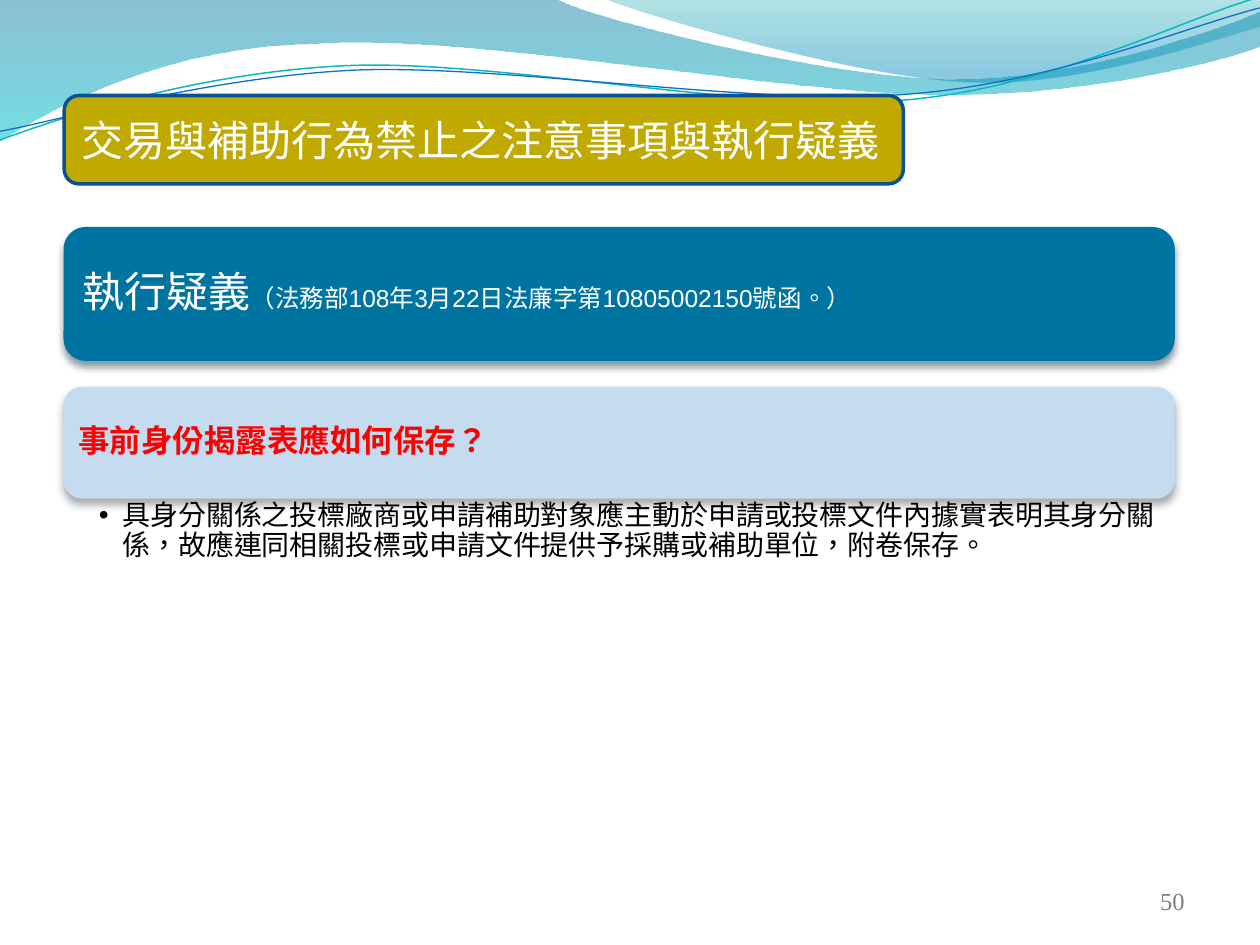
from lxml import etree
from pptx import Presentation
from pptx.dml.color import RGBColor
from pptx.enum.lang import MSO_LANGUAGE_ID
from pptx.enum.shapes import MSO_SHAPE
from pptx.enum.text import MSO_ANCHOR, MSO_AUTO_SIZE, PP_ALIGN
from pptx.oxml.ns import qn
from pptx.util import Pt

ROUND_RECT = MSO_SHAPE.ROUNDED_RECTANGLE
MIDDLE, TOP = MSO_ANCHOR.MIDDLE, MSO_ANCHOR.TOP
LEFT, RIGHT = PP_ALIGN.LEFT, PP_ALIGN.RIGHT
NO_AUTOFIT = MSO_AUTO_SIZE.NONE
TAIWAN = MSO_LANGUAGE_ID.TRADITIONAL_CHINESE

COLORS = {
    "gold": "C0A900", "navy": "0B5292", "blue": "0074A1", "pale": "C5DBEF",
    "white": "FFFFFF", "black": "000000", "red": "FF0000", "gray": "7F7F7F",
    "cyan": "00C6CF", "teal": "00A1A9", "sky": "008BBF",
    "teal_line": "0AB8BF", "blue_line": "0F6FC6",
    "blue_shadow": "002938", "pale_shadow": "454D54",
}
SANS, SERIF, TITLING, CJK = "Arial", "Times New Roman", "TeX Gyre Pagella", "Noto Sans CJK SC"
PANEL_LEFT, PANEL_WIDTH = 36.3, 635
TITLE_BOX = (36.7, 54.6, 479.5, 50.5)

BIG_WAVE = [(0, 0), (317, -1), (343, 12, 478, 45, 546, 45), (614, 45, 690, 19, 720, 6.5),
            (721, 26), (708, 32, 626, 55, 537, 54), (448, 54, 275, 20, 185, 24.5),
            (93, 26, 33, 60, -1, 81)]
SMALL_WAVE = [(345, -1), (366, 8, 491, 45, 554, 47), (616, 50, 692, 23, 720, 15), (720, 0)]
TEAL_CURVE = [(0, 80), (35, 67, 114, 41, 199, 37.5), (284, 34, 427, 64, 513, 57.5),
              (600, 51, 675, 11, 719, -1.5)]
BLUE_CURVE = [(0, 75), (34, 69, 118, 44, 204, 40), (290, 37, 430, 60.5, 516, 54),
              (602, 48, 678, 15, 720, 4.5)]


def rgb(name):
    return RGBColor.from_string(COLORS[name])


def add_outline(s, segments, closed):
    points = [(seg[i] * 100, seg[i + 1] * 100)
              for seg in segments for i in range(0, len(seg), 2)]
    builder = s.shapes.build_freeform(*points[0], scale=Pt(1) / 100)
    builder.add_line_segments(points[1:], close=closed)
    sp = builder.convert_to_shape()
    sp.shadow.inherit = False
    lines = iter(list(sp._element.iter(qn("a:lnTo"))))
    for seg in segments[1:]:
        first = next(lines)
        if len(seg) == 6:
            first.tag = qn("a:cubicBezTo")
            for _ in range(2):
                line = next(lines)
                first.append(line[0])
                line.getparent().remove(line)
    return sp


def add_wave(s, segments, stops):
    sp = add_outline(s, segments, True)
    sp.line.fill.background()
    sp.fill.gradient()
    sp.fill.gradient_angle = 270
    elements = sp._element.spPr.iter(qn("a:gs"))
    for stop, gs, (position, color, opacity) in zip(sp.fill.gradient_stops, elements, stops):
        stop.position = position
        stop.color.rgb = rgb(color)
        etree.SubElement(gs[0], qn("a:alpha"), val=str(opacity * 1000))


def add_curve(s, segments, color, width):
    sp = add_outline(s, segments, False)
    sp.fill.background()
    sp.line.color.rgb = rgb(color)
    sp.line.width = Pt(width)


def add_run(p, text, size, font, color, bold=False):
    r = p.add_run()
    r.text = text
    r.font.size = Pt(size)
    r.font.name = font
    r.font.bold = bold
    r.font.color.rgb = rgb(color)
    r.font.language_id = TAIWAN
    latin = r.font._element.find(qn("a:latin"))
    latin.addnext(latin.makeelement(qn("a:ea"), {"typeface": CJK}))


def setup_text(sp, anchor, insets, align=LEFT):
    tf = sp.text_frame
    tf.word_wrap = True
    tf.auto_size = NO_AUTOFIT
    tf.vertical_anchor = anchor
    tf.margin_left, tf.margin_top, tf.margin_right, tf.margin_bottom = map(Pt, insets)
    p = tf.paragraphs[0]
    p.alignment = align
    return p


def place(sp, box):
    sp.left, sp.top, sp.width, sp.height = map(Pt, box)


def add_round_box(s, box, fill):
    sp = s.shapes.add_shape(ROUND_RECT, *map(Pt, box))
    sp.fill.solid()
    sp.fill.fore_color.rgb = rgb(fill)
    sp.line.fill.background()
    sp.shadow.inherit = False
    return sp


def add_shadow(sp, color):
    effects = sp._element.spPr.find(qn("a:effectLst"))
    shadow = etree.SubElement(effects, qn("a:outerShdw"), blurRad=str(Pt(4.5)),
                              dist=str(Pt(3)), dir="5400000", rotWithShape="0")
    clr = etree.SubElement(shadow, qn("a:srgbClr"), val=COLORS[color])
    etree.SubElement(clr, qn("a:alpha"), val="48000")


def add_panel(s, top, height, fill, shadow, inset, runs):
    sp = add_round_box(s, (PANEL_LEFT, top, PANEL_WIDTH, height), fill)
    add_shadow(sp, shadow)
    p = setup_text(sp, MIDDLE, [inset] * 4)
    p.line_spacing = 0.9
    for run in runs:
        add_run(p, *run)


def fill_title(s, text):
    frame = add_round_box(s, TITLE_BOX, "gold")
    frame.line.color.rgb = rgb("navy")
    frame.line.width = Pt(2)
    sp = s.shapes.title
    s.shapes._spTree.append(sp._element)
    place(sp, TITLE_BOX)
    add_run(setup_text(sp, MIDDLE, (9.7, 3.6, 7.2, 3.6)), text, 24, SANS, "white")


def fill_body(s, text):
    sp = s.placeholders[1]
    s.shapes._spTree.append(sp._element)
    place(sp, (PANEL_LEFT, 285, PANEL_WIDTH, 85))
    p = setup_text(sp, TOP, (20.2, 1.6, 8.6, 1.6))
    p.line_spacing = 0.9
    p.space_before = Pt(0)
    p.space_after = Pt(3.2)
    pPr = p._p.get_or_add_pPr()
    pPr.set("marL", str(Pt(13.5)))
    pPr.set("indent", str(Pt(-13.5)))
    etree.SubElement(pPr, qn("a:buChar"), char="•")
    add_run(p, text, 16, SANS, "black")


def add_page_number(s, number):
    sp = s.shapes.add_textbox(Pt(516), Pt(500), Pt(168), Pt(29))
    p = setup_text(sp, MIDDLE, (7.2, 3.6, 7.2, 3.6), RIGHT)
    add_run(p, number, 14, SERIF, "gray")


def main():
    prs = Presentation()
    prs.slide_width, prs.slide_height = Pt(720), Pt(540)
    s = prs.slides.add_slide(prs.slide_layouts[1])
    add_wave(s, BIG_WAVE, [(0, "blue", 45), (1, "cyan", 55)])
    add_wave(s, SMALL_WAVE, [(0, "teal", 30), (0.8, "sky", 45)])
    add_curve(s, TEAL_CURVE, "teal_line", 0.85)
    add_curve(s, BLUE_CURVE, "blue_line", 0.75)
    add_page_number(s, "50")
    add_panel(s, 129.7, 76.5, "blue", "blue_shadow", 7.2, [
        ("執行疑義", 24, TITLING, "white"),
        ("（", 14, TITLING, "white"),
        ("法務部108年3月22日法廉字第10805002150號函。", 14, SANS, "white"),
        ("）", 14, TITLING, "white"),
    ])
    add_panel(s, 221, 64, "pale", "pale_shadow", 5.4, [
        ("事前身份揭露表應如何保存？", 18, CJK, "red", True),
    ])
    fill_body(s, "具身分關係之投標廠商或申請補助對象應主動於申請或投標文件內據實表明其身分關係，"
                 "故應連同相關投標或申請文件提供予採購或補助單位，附卷保存。")
    fill_title(s, "交易與補助行為禁止之注意事項與執行疑義")
    prs.save("out.pptx")


if __name__ == "__main__":
    main()
